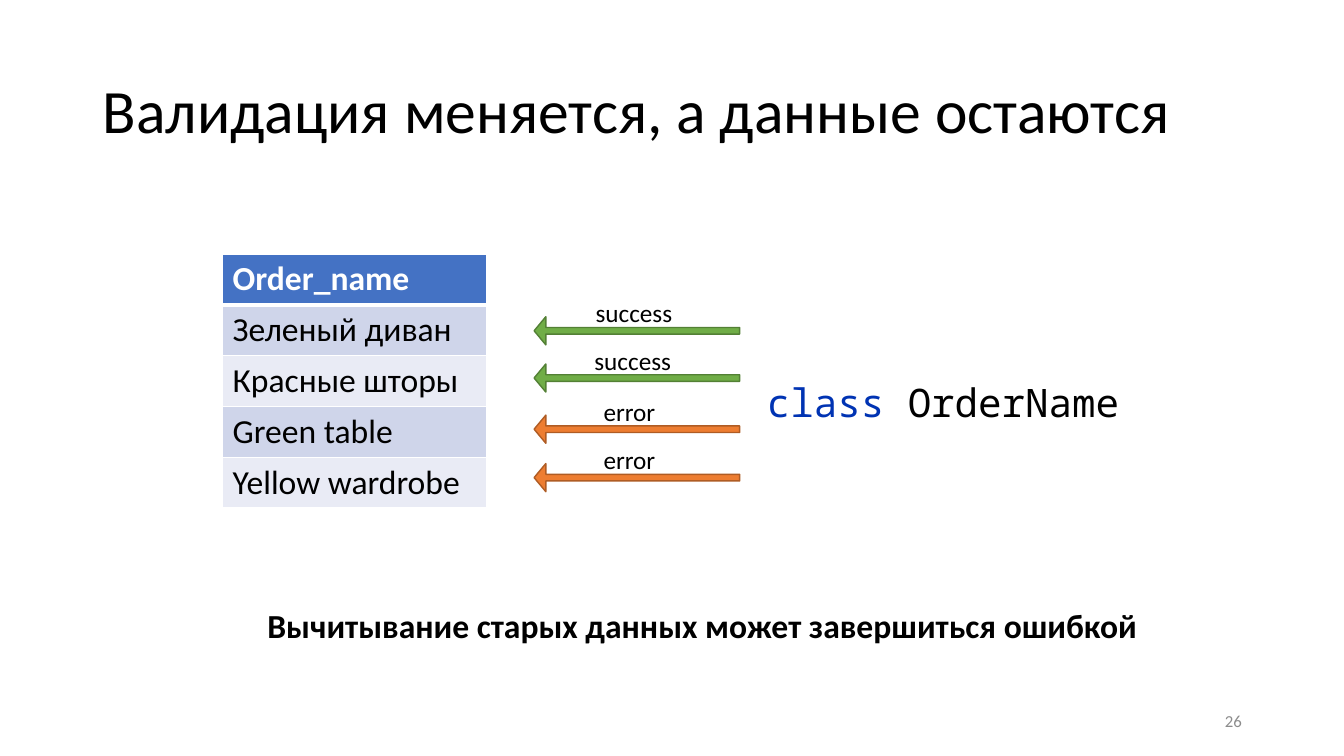
from pptx import Presentation
from pptx.dml.color import RGBColor as Rgb
from pptx.enum.shapes import MSO_SHAPE as Kind
from pptx.enum.text import MSO_ANCHOR as Anchor, MSO_AUTO_SIZE as Fit, PP_ALIGN as Align
from pptx.oxml import parse_xml
from pptx.oxml.ns import nsdecls
from pptx.util import Cm, Pt

COLORS = {
    "black": "000000", "white": "FFFFFF", "gray": "8C8C8C", "code": "0033B3",
    "head": "4472C4", "odd": "CFD5EA", "even": "E9EBF5",
    "green": "70AD47", "forest": "538035", "orange": "ED7D31", "rust": "AF5C24",
}
ORDERS = ["Order_name", "Зеленый диван", "Красные шторы", "Green table", "Yellow wardrobe"]
CHECKS = [
    ("success", 14.76, 7.98, "green", "forest"),
    ("success", 14.73, 9.17, "green", "forest"),
    ("error", 14.96, 10.46, "orange", "rust"),
    ("error", 14.96, 11.68, "orange", "rust"),
]


def tint(name):
    return Rgb.from_string(COLORS[name])


def style(para, size, color="black", bold=False, face="Calibri"):
    font = para.font
    font.name, font.size, font.bold = face, Pt(size), bold
    font.color.rgb = tint(color)


def add_title(slide, text):
    title = slide.shapes.title
    title.left, title.top, title.width, title.height = Cm(2.34), Cm(1.02), Cm(29.21), Cm(3.68)
    frame = title.text_frame
    frame.text = text
    frame.auto_size = Fit.NONE
    frame.vertical_anchor = Anchor.MIDDLE
    para = frame.paragraphs[0]
    para.alignment, para.line_spacing = Align.LEFT, 0.9
    style(para, 44)


def add_text(slide, box, text, size, align=Align.LEFT, anchor=Anchor.TOP, **look):
    frame = slide.shapes.add_textbox(*map(Cm, box)).text_frame
    frame.word_wrap = True
    frame.vertical_anchor = anchor
    para = frame.paragraphs[0]
    para.text, para.alignment = text, align
    style(para, size, **look)
    return para


def add_code(slide, box, word, name):
    para = add_text(slide, box, word, 28, Align.CENTER, face="Noto Sans Mono")
    para.runs[0].font.color.rgb = tint("code")
    para.add_run().text = name


def add_edges(cell, widths):
    props = cell._tc.get_or_add_tcPr()
    for side, width in widths.items():
        props.append(parse_xml(
            f'<a:ln{side} {nsdecls("a")} w="{Pt(width)}"><a:solidFill>'
            f'<a:srgbClr val="{COLORS["white"]}"/></a:solidFill></a:ln{side}>'))


def add_table(slide, rows):
    high = 1.28
    table = slide.shapes.add_table(
        len(rows), 1, Cm(5.61), Cm(6.4), Cm(6.65), Cm(high * len(rows))).table
    for i, text in enumerate(rows):
        table.rows[i].height = Cm(high)
        cell = table.cell(i, 0)
        cell.text = text
        head = i == 0
        style(cell.text_frame.paragraphs[0], 24, "white" if head else "black", head)
        add_edges(cell, {"L": 1, "R": 1, "T": 3 if i == 1 else 1, "B": 3 if head else 1})
        cell.fill.solid()
        cell.fill.fore_color.rgb = tint("head" if head else "odd" if i % 2 else "even")


def add_arrow(slide, top, fill, line):
    arrow = slide.shapes.add_shape(Kind.RIGHT_ARROW, Cm(13.46), Cm(top), Cm(5.18), Cm(0.71))
    arrow.rotation = 180
    arrow.adjustments[0], arrow.adjustments[1] = 0.235, 0.415
    arrow.shadow.inherit = False
    arrow.fill.solid()
    arrow.fill.fore_color.rgb = tint(fill)
    arrow.line.color.rgb = tint(line)
    arrow.line.width = Pt(1)


def main():
    deck = Presentation()
    deck.slide_width, deck.slide_height = Cm(33.87), Cm(19.05)
    slide = deck.slides.add_slide(deck.slide_layouts[5])
    add_title(slide, "Валидация меняется, а данные остаются")
    add_text(slide, (23.93, 17.65, 7.62, 1.02), "26", 12, Align.RIGHT, Anchor.MIDDLE, color="gray")
    add_table(slide, ORDERS)
    add_code(slide, (18.62, 9.4, 10.29, 1.45), "class ", "OrderName")
    for text, left, top, fill, line in CHECKS:
        add_arrow(slide, top, fill, line)
        add_text(slide, (left, top - 0.6, 3.28, 1.02), text, 18)
    add_text(slide, (6.22, 15.11, 22.96, 1.27),
             "Вычитывание старых данных может завершиться ошибкой", 24, Align.CENTER, bold=True)
    deck.save("out.pptx")


if __name__ == "__main__":
    main()
